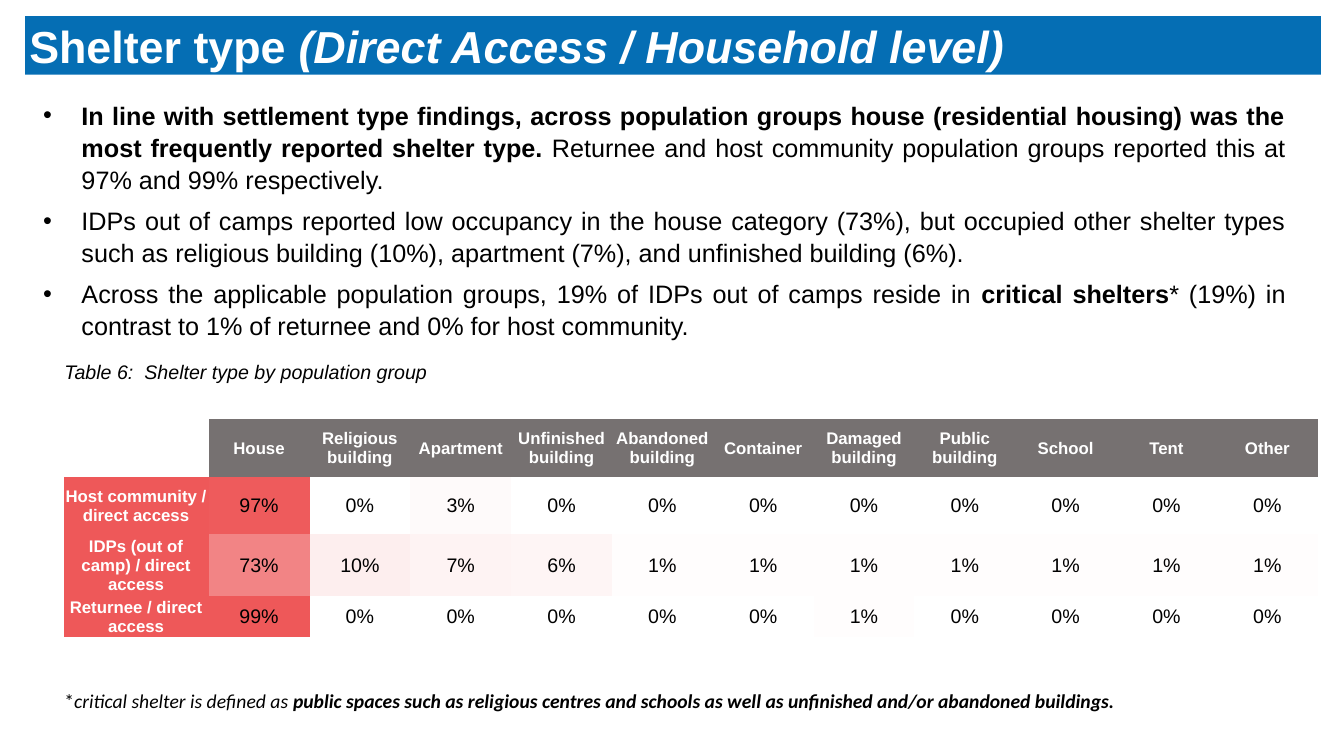
from pptx import Presentation
from pptx.dml.color import RGBColor
from pptx.enum.shapes import MSO_SHAPE
from pptx.enum.text import MSO_ANCHOR, PP_ALIGN
from pptx.oxml.ns import qn
from pptx.util import Inches, Pt
from lxml.etree import SubElement

BLUE = RGBColor(0x05, 0x6E, 0xB4)
GREY = RGBColor(0x76, 0x71, 0x71)
RED = RGBColor(0xEE, 0x58, 0x59)
WHITE = RGBColor(0xFF, 0xFF, 0xFF)
BLACK = RGBColor(0, 0, 0)
NO_STYLE_NO_GRID = "{2D5ABB26-0587-4C30-8999-92F81FD0307C}"

FINDINGS = [
    [("In line with settlement type findings, across population groups house "
      "(residential housing) was the most frequently reported shelter type. ", "b"),
     ("Returnee and host community population groups reported this at 97% and 99% "
      "respectively.", "")],
    [("IDPs out of camps reported low occupancy in the house category (73%), but "
      "occupied other shelter types such as religious building (10%), apartment (7%), "
      "and unfinished building (6%).", "")],
    [("Across the applicable population groups, 19% of IDPs out of camps reside in ", ""),
     ("critical shelters", "b"),
     ("* (19%) in contrast to 1% of returnee and 0% for host community.", "")],
]
SHELTERS = ["House", "Religious building", "Apartment", "Unfinished building",
            "Abandoned building", "Container", "Damaged building", "Public building",
            "School", "Tent", "Other"]
SHARES = {
    "Host community / direct access": [97, 0, 3, 0, 0, 0, 0, 0, 0, 0, 0],
    "IDPs (out of camp) / direct access": [73, 10, 7, 6, 1, 1, 1, 1, 1, 1, 1],
    "Returnee / direct access": [99, 0, 0, 0, 0, 0, 1, 0, 0, 0, 0],
}
ROW_HEIGHTS = [0.57, 0.57, 0.57, 0.38]


def heat(share, top):
    """Blend from white at zero to red at the top share."""
    return RGBColor(*(round(255 - (255 - channel) * share / top) for channel in RED))


class ShelterPage:
    def __init__(self, page, font="Arial"):
        self.page = page
        self.font = font

    def add_spans(self, para, spans, size, color=BLACK, font=None):
        """Add (text, style) runs; the style holds b for bold and i for italic."""
        for text, style in spans:
            span = para.add_run()
            span.text = text
            span.font.name = font or self.font
            span.font.size = Pt(size)
            span.font.bold = "b" in style
            span.font.italic = "i" in style
            span.font.color.rgb = color

    def indent(self, para, left, first):
        properties = para._p.get_or_add_pPr()
        properties.set("marL", str(Inches(left)))
        properties.set("indent", str(Inches(first)))
        return properties

    def banner(self, left, top, width, height, spans):
        box = self.page.shapes.add_shape(
            MSO_SHAPE.RECTANGLE, Inches(left), Inches(top), Inches(width), Inches(height))
        box.shadow.inherit = False
        box.fill.solid()
        box.fill.fore_color.rgb = BLUE
        box.line.fill.background()
        frame = box.text_frame
        frame.word_wrap = False
        frame.vertical_anchor = MSO_ANCHOR.MIDDLE
        frame.margin_left = frame.margin_right = 0
        frame.margin_top = frame.margin_bottom = 0
        para = frame.paragraphs[0]
        para.alignment = PP_ALIGN.LEFT
        para.space_before = Pt(8)
        self.indent(para, 0.42, -0.38)
        self.add_spans(para, spans, 32, WHITE)

    def text_frame(self, left, top, width, height):
        box = self.page.shapes.add_textbox(
            Inches(left), Inches(top), Inches(width), Inches(height))
        box.text_frame.word_wrap = True
        return box.text_frame

    def note(self, left, top, width, height, spans, font=None):
        frame = self.text_frame(left, top, width, height)
        self.add_spans(frame.paragraphs[0], spans, 14, font=font)

    def bullets(self, left, top, width, height, items):
        frame = self.text_frame(left, top, width, height)
        for index, spans in enumerate(items):
            para = frame.add_paragraph() if index else frame.paragraphs[0]
            para.alignment = PP_ALIGN.JUSTIFY
            para.line_spacing = 1.07
            para.space_after = Pt(6)
            properties = self.indent(para, 0.38, -0.38)
            SubElement(properties, qn("a:buFont")).set("typeface", "Arial")
            SubElement(properties, qn("a:buChar")).set("char", "•")
            self.add_spans(para, spans, 18)

    def cell(self, cell, text, fill, size=12, color=WHITE, style="b"):
        cell.fill.solid()
        cell.fill.fore_color.rgb = fill
        cell.vertical_anchor = MSO_ANCHOR.MIDDLE
        cell.margin_left = cell.margin_right = cell.margin_top = Inches(0.01)
        cell.margin_bottom = 0
        para = cell.text_frame.paragraphs[0]
        para.alignment = PP_ALIGN.CENTER
        self.add_spans(para, [(text, style)], size, color)

    def heat_table(self, left, top, label_width, column_width):
        frame = self.page.shapes.add_table(
            len(SHARES) + 1, len(SHELTERS) + 1, Inches(left), Inches(top),
            Inches(label_width + column_width * len(SHELTERS)), Inches(sum(ROW_HEIGHTS)))
        table = frame.table
        table.first_row = table.horz_banding = False
        table._tbl.tblPr.find(qn("a:tableStyleId")).text = NO_STYLE_NO_GRID
        for index, column in enumerate(table.columns):
            column.width = Inches(column_width if index else label_width)
        for row, height in zip(table.rows, ROW_HEIGHTS):
            row.height = Inches(height)
        table.cell(0, 0).fill.background()
        for column, shelter in enumerate(SHELTERS, 1):
            self.cell(table.cell(0, column), shelter, GREY)
        top_share = max(max(shares) for shares in SHARES.values())
        for row, (group, shares) in enumerate(SHARES.items(), 1):
            self.cell(table.cell(row, 0), group, RED)
            for column, share in enumerate(shares, 1):
                self.cell(table.cell(row, column), f"{share}%", heat(share, top_share),
                          14, BLACK, "")


def main():
    deck = Presentation()
    deck.slide_width, deck.slide_height = Inches(13.33), Inches(7.5)
    page = ShelterPage(deck.slides.add_slide(deck.slide_layouts[6]))
    page.banner(0.25, 0.16, 12.85, 0.58,
                [("Shelter type ", "b"), ("(Direct Access / Household level)", "bi")])
    page.bullets(0.33, 0.92, 12.52, 2.95, FINDINGS)
    page.note(0.54, 3.52, 12.26, 0.34,
              [("Table 6:  Shelter type by population group", "i")])
    page.heat_table(0.63, 4.16, 1.44, 1)
    page.note(0.54, 6.79, 12.15, 0.34,
              [("*", ""), ("critical shelter is defined as ", "i"),
               ("public spaces such as religious centres and schools as well as "
                "unfinished and/or abandoned buildings.", "bi")], "Calibri")
    deck.save("out.pptx")


if __name__ == "__main__":
    main()
